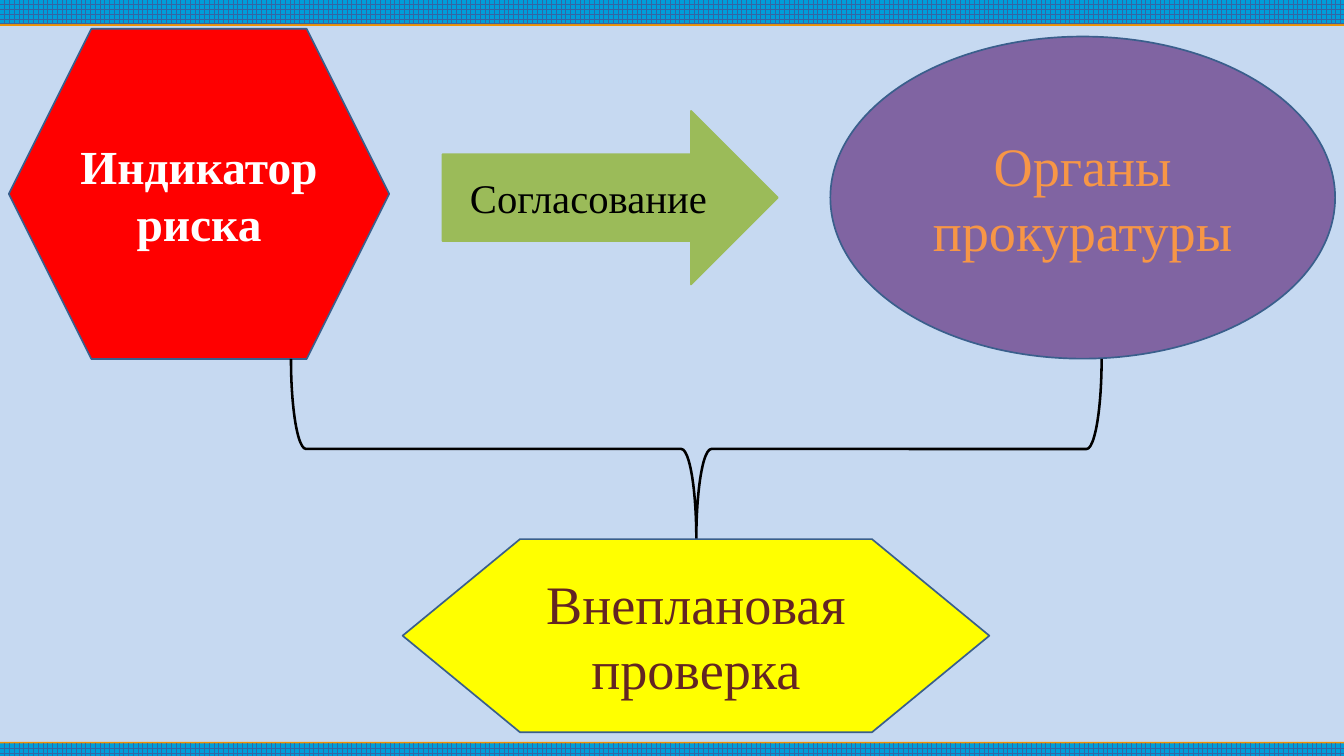
from dataclasses import dataclass

from lxml import etree
from pptx import Presentation
from pptx import util as u
from pptx.dml.color import RGBColor
from pptx.enum import dml, shapes, text
from pptx.oxml import ns

SLIDE_W, SLIDE_H = 793.44, 446.4
SHAPE = shapes.MSO_SHAPE


@dataclass(frozen=True)
class Theme:
    font: str = "Times New Roman"
    background: str = "C6D9F1"
    band: str = "009EDA"
    grid: str = "3465A4"
    band_edge: str = "F49100"
    outline: str = "3A5F8C"
    red: str = "FF0000"
    green: str = "9BBB59"
    purple: str = "8064A2"
    yellow: str = "FFFF00"
    white: str = "FFFFFF"
    black: str = "000000"
    orange: str = "F79646"
    brown: str = "632523"
    small: int = 24
    medium: int = 28
    large: int = 32


T = Theme()


def rgb(value):
    return RGBColor.from_string(value)


def add_preset(s, kind, box):
    sp = s.shapes.add_shape(kind, *(u.Pt(v) for v in box))
    sp.shadow.inherit = False
    return sp


def set_line(sp, color, width):
    sp.line.color.rgb = rgb(color)
    sp.line.width = u.Pt(width)


def add_band(s, top, height, direction):
    """Grid-patterned strip with a thin coloured edge cast by its shadow."""
    sp = add_preset(s, SHAPE.RECTANGLE, (0, top, SLIDE_W, height))
    sp.fill.patterned()
    sp.fill.pattern = dml.MSO_PATTERN.LARGE_GRID
    sp.fill.fore_color.rgb = rgb(T.grid)
    sp.fill.back_color.rgb = rgb(T.band)
    sp.line.fill.background()
    effects = sp._element.spPr.find(ns.qn("a:effectLst"))
    shadow = etree.SubElement(effects, ns.qn("a:outerShdw"), blurRad="0",
                              dist=str(u.Pt(0.9)), dir=str(direction * 60000),
                              algn="ctr", rotWithShape="0")
    etree.SubElement(shadow, ns.qn("a:srgbClr"), val=T.band_edge)


def add_node(s, kind, box, label, fill, line, color, size, bold=False):
    sp = add_preset(s, kind, box)
    sp.fill.solid()
    sp.fill.fore_color.rgb = rgb(fill)
    set_line(sp, line, 1)
    tf = sp.text_frame
    tf.word_wrap = True
    tf.vertical_anchor = text.MSO_ANCHOR.MIDDLE
    p = tf.paragraphs[0]
    p.alignment = text.PP_ALIGN.CENTER
    r = p.add_run()
    r.text = label
    for name, value in {"name": T.font, "size": u.Pt(size), "bold": bold}.items():
        setattr(r.font, name, value)
    r.font.color.rgb = rgb(color)


def add_brace(s, box):
    sp = add_preset(s, SHAPE.RIGHT_BRACE, box)
    sp.rotation = 90
    sp.fill.background()
    set_line(sp, T.black, 1.5)


def main():
    prs = Presentation()
    prs.slide_width, prs.slide_height = u.Pt(SLIDE_W), u.Pt(SLIDE_H)
    s = prs.slides.add_slide(prs.slide_layouts[6])
    s.background.fill.solid()
    s.background.fill.fore_color.rgb = rgb(T.background)

    # Top and bottom bands
    add_band(s, 0, 14.2, 90)
    add_band(s, 439, SLIDE_H - 439, 270)

    # Indicator, approval and prosecutor's office
    add_node(s, SHAPE.HEXAGON, (5.2, 17, 224.6, 195), "Индикатор риска",
             T.red, T.outline, T.white, T.medium, bold=True)
    add_node(s, SHAPE.RIGHT_ARROW, (261.2, 65.5, 198, 102.5), "Согласование",
             T.green, T.green, T.black, T.small)
    add_node(s, SHAPE.OVAL, (490.2, 21.6, 298, 190.2), "Органы прокуратуры",
             T.purple, T.outline, T.orange, T.large)

    # Brace leading to the resulting inspection
    add_brace(s, (357.8, 25.8, 106.5, 478.6))
    add_node(s, SHAPE.FLOWCHART_PREPARATION, (237.7, 318.4, 346.4, 114),
             "Внеплановая проверка", T.yellow, T.outline, T.brown, T.large)

    prs.save("out.pptx")


if __name__ == "__main__":
    main()
